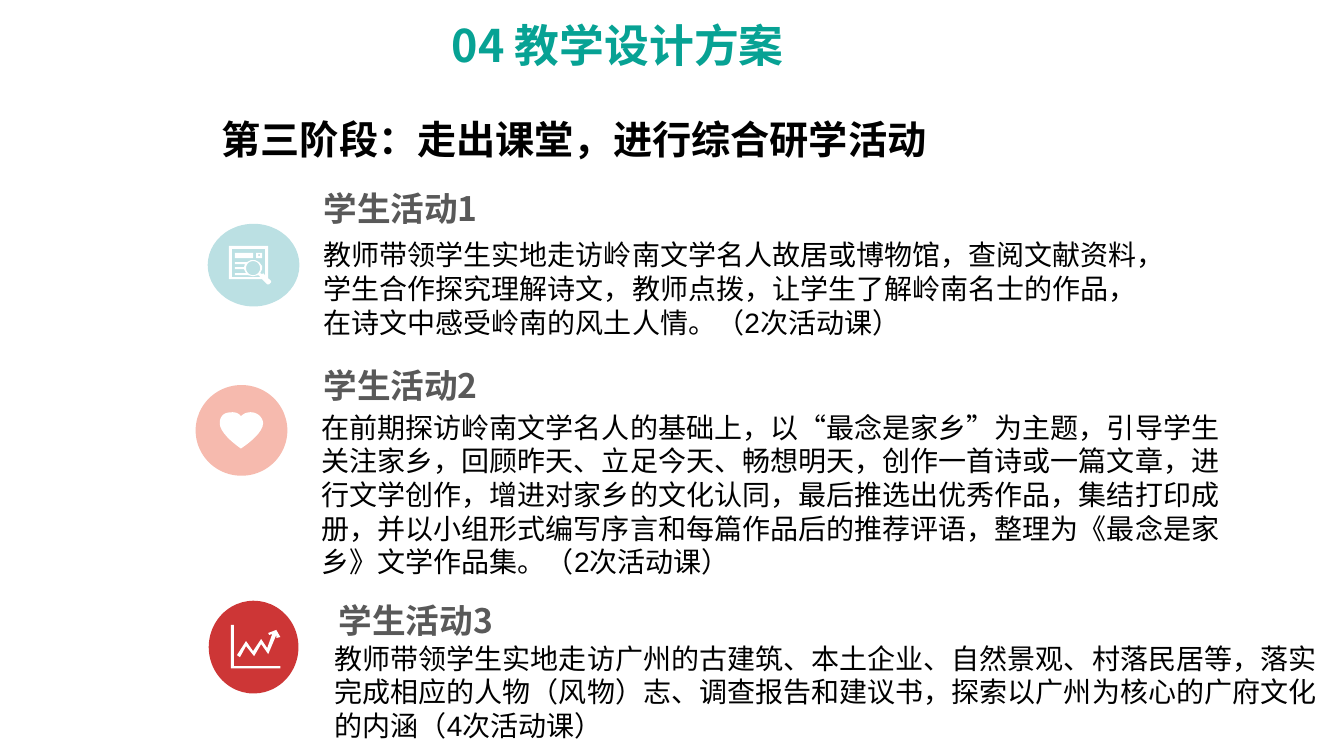
"""Build the slide on the third stage of the teaching plan."""
from dataclasses import dataclass
from math import cos, pi, sin

from lxml.etree import SubElement
from pptx import Presentation
from pptx.dml.color import RGBColor
from pptx.enum.lang import MSO_LANGUAGE_ID
from pptx.enum.shapes import MSO_SHAPE
from pptx.enum.text import MSO_ANCHOR, MSO_AUTO_SIZE, PP_ALIGN
from pptx.oxml.ns import qn
from pptx.util import Inches, Pt

Point = tuple[float, float]
Box = tuple[float, float, float, float]
HEADING_FONT = "Noto Sans CJK SC"
BODY_FONT = "Arial"


@dataclass
class Activity:
    """One student activity: its badge, icon outlines, heading and description."""
    heading: str
    heading_box: Box
    description: str
    description_box: Box
    badge_box: Box
    badge_color: str
    icon: list[list[Point]]
    opacity: int = 100
    on_panel: bool = False


def rectangle(left: float, top: float, right: float, bottom: float) -> list[Point]:
    """Return the corners of a rectangle."""
    return [(left, top), (right, top), (right, bottom), (left, bottom)]


def circle(x: float, y: float, radius: float) -> list[Point]:
    """Return points around a circle."""
    return [(x + radius * cos(step * pi / 16), y + radius * sin(step * pi / 16))
            for step in range(32)]


def curve(start: Point, *controls: Point) -> list[Point]:
    """Return points along joined cubic curves, three controls to each."""
    points = [start]
    for index in range(0, len(controls), 3):
        a, (b, c, d) = points[-1], controls[index:index + 3]
        for step in range(1, 11):
            t = step / 10
            weights = ((1 - t) ** 3, 3 * t * (1 - t) ** 2, 3 * t * t * (1 - t), t ** 3)
            points.append(tuple(sum(w * p[axis] for w, p in zip(weights, (a, b, c, d)))
                                for axis in (0, 1)))
    return points


def set_fill(shape, color: str, opacity: int = 100) -> None:
    """Give a shape a flat fill without outline or shadow."""
    shape.shadow.inherit = False
    shape.line.fill.background()
    shape.fill.solid()
    shape.fill.fore_color.rgb = RGBColor.from_string(color)
    if opacity < 100:
        for tint in shape.fill._xPr.iter(qn("a:srgbClr")):
            SubElement(tint, qn("a:alpha")).set("val", str(opacity * 1000))


def write(shape, text: str, size: int, color: str, font_name: str, bold: bool = False,
          anchor: MSO_ANCHOR = MSO_ANCHOR.TOP) -> None:
    """Put one formatted, wrapped paragraph into a shape."""
    frame = shape.text_frame
    frame.text = text
    frame.word_wrap = True
    frame.auto_size = MSO_AUTO_SIZE.SHAPE_TO_FIT_TEXT
    frame.vertical_anchor = anchor
    paragraph = frame.paragraphs[0]
    paragraph.alignment = PP_ALIGN.LEFT
    for run in paragraph.runs:
        font = run.font
        font.name, font.size, font.bold = font_name, Pt(size), bold
        font.color.rgb = RGBColor.from_string(color)
        font.language_id = MSO_LANGUAGE_ID.SIMPLIFIED_CHINESE
        SubElement(font._element, qn("a:ea")).set("typeface", HEADING_FONT)


def inches(box: Box) -> list[Inches]:
    """Convert a box to lengths."""
    return [Inches(value) for value in box]


def draw_icon(shapes, outlines: list[list[Point]]) -> None:
    """Draw white outlines as one freeform; inner outlines become holes."""
    scaled = [[(Inches(x), Inches(y)) for x, y in outline] for outline in outlines]
    builder = shapes.build_freeform(*scaled[0][0], scale=1.0)
    builder.add_line_segments(scaled[0][1:], close=True)
    for outline in scaled[1:]:
        builder.move_to(*outline[0])
        builder.add_line_segments(outline[1:], close=True)
    set_fill(builder.convert_to_shape(), "FFFFFF")


def draw_activity(shapes, activity: Activity) -> None:
    """Draw the description, heading, badge and icon of an activity."""
    if activity.on_panel:
        description = shapes.add_shape(MSO_SHAPE.RECTANGLE, *inches(activity.description_box))
        set_fill(description, "FFFFFF", activity.opacity)
    else:
        description = shapes.add_textbox(*inches(activity.description_box))
    write(description, activity.description, 20, "000000", BODY_FONT,
          anchor=MSO_ANCHOR.BOTTOM if activity.on_panel else MSO_ANCHOR.TOP)
    heading = shapes.add_textbox(*inches(activity.heading_box))
    write(heading, activity.heading, 24, "595959", HEADING_FONT, bold=True)
    heading.text_frame.paragraphs[0].alignment = PP_ALIGN.JUSTIFY
    heading.text_frame.paragraphs[0].line_spacing = 1.2
    badge = shapes.add_shape(MSO_SHAPE.OVAL, *inches(activity.badge_box))
    set_fill(badge, activity.badge_color, activity.opacity)
    draw_icon(shapes, activity.icon)


RESEARCH_ICON = [
    [(2.27, 2.44), (2.66, 2.44), (2.66, 2.76), (2.69, 2.79), (2.69, 2.8), (2.68, 2.81),
     (2.67, 2.82), (2.65, 2.82), (2.6, 2.77), (2.27, 2.77)],
    [(2.3, 2.47), (2.3, 2.75), (2.57, 2.75), (2.58, 2.74), (2.56, 2.73), (2.51, 2.74),
     (2.46, 2.73), (2.33, 2.73), (2.33, 2.71), (2.44, 2.71), (2.42, 2.67), (2.33, 2.67),
     (2.33, 2.65), (2.42, 2.65), (2.43, 2.62), (2.33, 2.62), (2.33, 2.6), (2.45, 2.6),
     (2.49, 2.58), (2.53, 2.58), (2.57, 2.6), (2.6, 2.64), (2.6, 2.67), (2.58, 2.71),
     (2.6, 2.72), (2.61, 2.71), (2.63, 2.73), (2.63, 2.47)],
    circle(2.51, 2.66, 0.07),
    rectangle(2.33, 2.51, 2.51, 2.56),
    rectangle(2.54, 2.51, 2.6, 2.56),
    circle(2.57, 2.53, 0.01),
]
HEART_ICON = [curve(
    (2.49, 4.09), (2.55, 4.09), (2.61, 4.14), (2.61, 4.2), (2.61, 4.31), (2.39, 4.45),
    (2.39, 4.45), (2.39, 4.45), (2.18, 4.31), (2.18, 4.2), (2.18, 4.12), (2.23, 4.09),
    (2.3, 4.09), (2.34, 4.09), (2.37, 4.1), (2.39, 4.13), (2.42, 4.1), (2.45, 4.09),
    (2.49, 4.09))]
TREND_ICON = [
    [(2.74, 6.25), (2.78, 6.32), (2.74, 6.33), (2.74, 6.3), (2.66, 6.49), (2.59, 6.39),
     (2.52, 6.51), (2.44, 6.41), (2.38, 6.52), (2.35, 6.5), (2.44, 6.36), (2.51, 6.46),
     (2.59, 6.34), (2.65, 6.43), (2.7, 6.29), (2.67, 6.3), (2.66, 6.28)],
    [(2.29, 6.2), (2.32, 6.2), (2.32, 6.61), (2.78, 6.61), (2.78, 6.63), (2.29, 6.63)],
]
ACTIVITIES = [
    Activity("学生活动1", (3.11, 1.74, 3.86, 0.83),
             "教师带领学生实地走访岭南文学名人故居或博物馆，查阅文献资料，学生合作探究理解诗文，"
             "教师点拨，让学生了解岭南名士的作品，在诗文中感受岭南的风土人情。（2次活动课）",
             (3.11, 2.31, 8.51, 1.11), (2.06, 2.22, 0.91, 0.82), "BBE0E3", RESEARCH_ICON),
    Activity("学生活动2", (3.11, 3.49, 3.18, 0.55),
             "在前期探访岭南文学名人的基础上，以“最念是家乡”为主题，引导学生关注家乡，回顾昨天、"
             "立足今天、畅想明天，创作一首诗或一篇文章，进行文学创作，增进对家乡的文化认同，"
             "最后推选出优秀作品，集结打印成册，并以小组形式编写序言和每篇作品后的推荐评语，"
             "整理为《最念是家乡》文学作品集。（2次活动课）",
             (3.09, 4.02, 9.11, 1.78), (1.94, 3.82, 0.91, 0.9), "F6BAAE", HEART_ICON),
    Activity("学生活动3", (3.26, 5.82, 3.66, 0.55),
             "教师带领学生实地走访广州的古建筑、本土企业、自然景观、村落民居等，落实完成相应的人物"
             "（风物）志、调查报告和建议书，探索以广州为核心的广府文化的内涵（4次活动课）",
             (3.22, 5.96, 9.98, 1.45), (2.07, 5.96, 0.89, 0.92), "C00000", TREND_ICON,
             opacity=79, on_panel=True),
]


def main() -> None:
    """Build and save the slide."""
    deck = Presentation()
    deck.slide_width, deck.slide_height = Inches(13.33), Inches(7.5)
    slide = deck.slides.add_slide(deck.slide_layouts[5])
    title = slide.shapes.title
    title.left, title.top, title.width, title.height = inches((4.38, 0.13, 5.94, 0.64))
    write(title, "04 教学设计方案", 32, "07A294", HEADING_FONT, bold=True)
    stage = slide.shapes.add_textbox(*inches((2.1, 1.09, 11.2, 0.57)))
    write(stage, "第三阶段：走出课堂，进行综合研学活动", 28, "000000", BODY_FONT, bold=True)
    for activity in ACTIVITIES:
        draw_activity(slide.shapes.add_group_shape().shapes, activity)
    deck.save("out.pptx")


if __name__ == "__main__":
    main()
